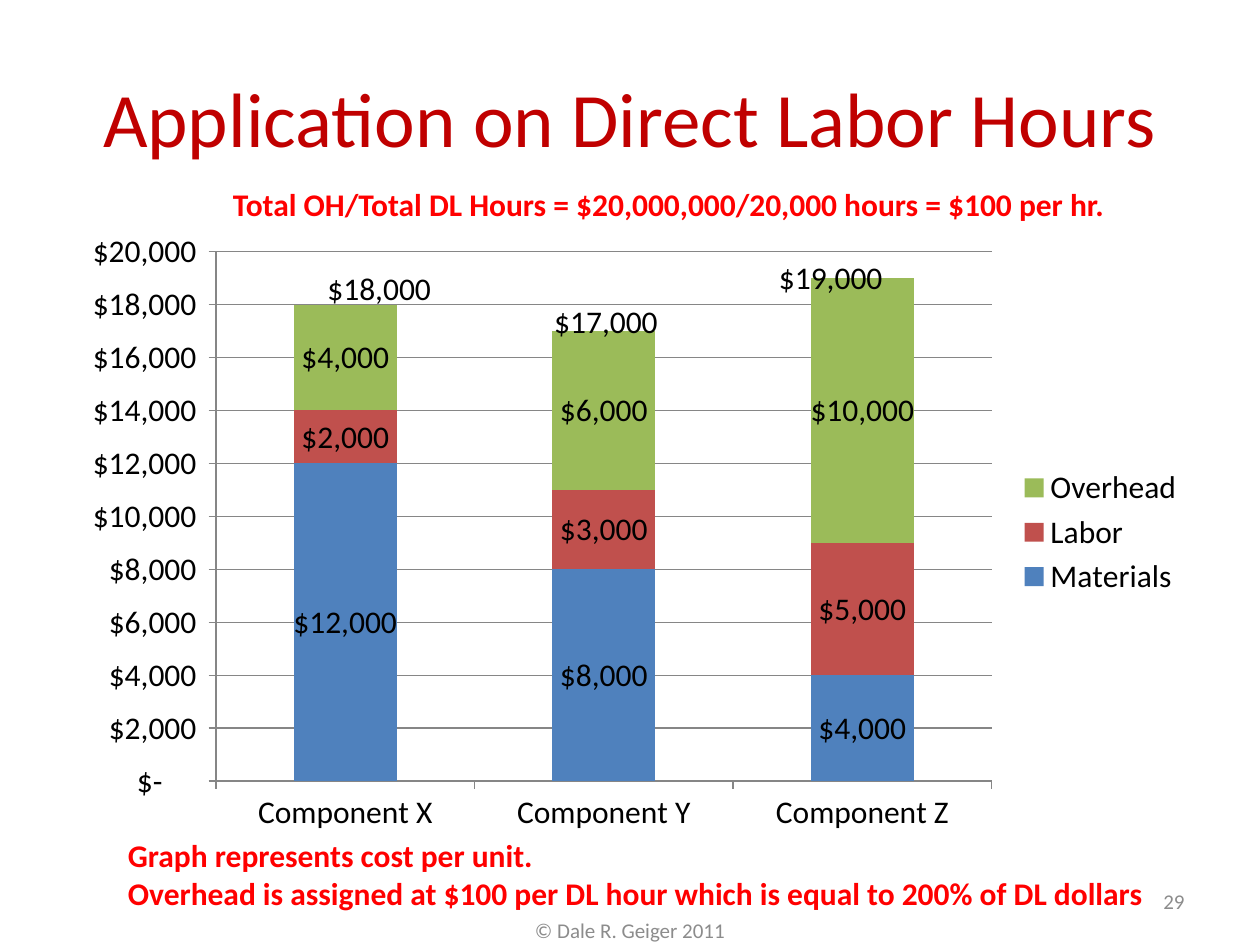
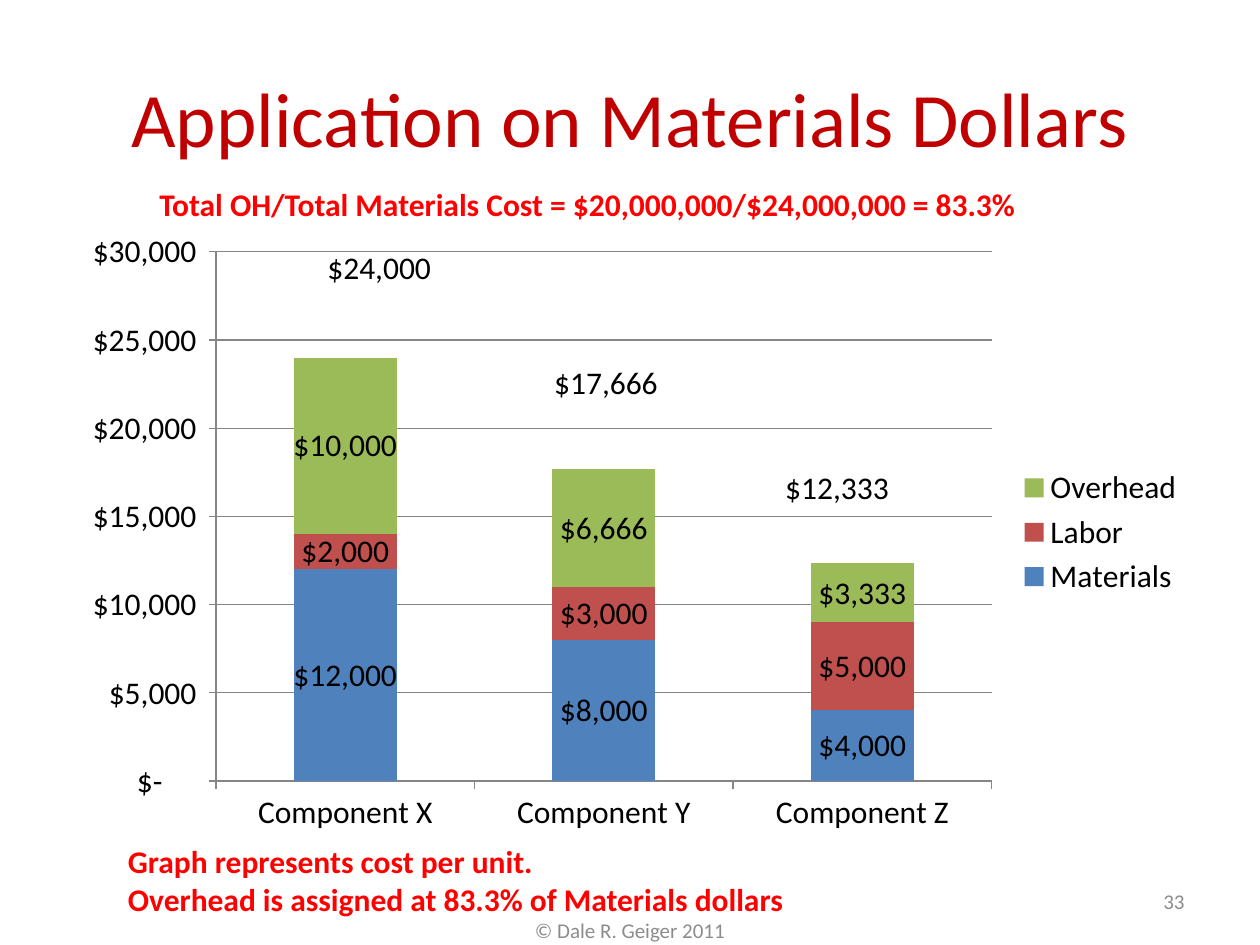
from dataclasses import dataclass

from lxml.etree import SubElement
from pptx import Presentation
from pptx.chart.data import CategoryChartData
from pptx.dml.color import RGBColor
from pptx.enum.chart import XL_CHART_TYPE as ChartType
from pptx.enum.chart import XL_LEGEND_POSITION as LegendPosition
from pptx.enum.chart import XL_TICK_MARK as TickMark
from pptx.enum.text import MSO_ANCHOR as Anchor
from pptx.enum.text import MSO_AUTO_SIZE as AutoSize
from pptx.enum.text import PP_ALIGN as Align
from pptx.oxml.ns import qn
from pptx.util import Inches, Pt


@dataclass(frozen=True)
class Theme:
    """Colours, type sizes and number format shared by the slides."""
    font: str = "Calibri"
    title: str = "C00000"
    accent: str = "FF0000"
    ink: str = "000000"
    muted: str = "8C8C8C"
    rule: str = "868686"
    series: tuple = ("4F81BD", "C0504D", "9BBB59")
    title_size: int = 44
    body_size: int = 18
    footer_size: int = 12
    money: str = '_("$"* #,##0_);_("$"* \\(#,##0\\);_("$"* "-"??_);_(@_)'


@dataclass(frozen=True)
class Box:
    """A region in grid columns and rows, twelve to the inch."""
    left: float
    top: float
    width: float
    height: float

    def inside(self, column, row, width, height):
        """Return a box placed relative to this one."""
        return Box(self.left + column, self.top + row, width, height)

    def lengths(self):
        """Return left, top, width and height as slide lengths."""
        cells = (self.left, self.top, self.width, self.height)
        return [Inches(cell / 12) for cell in cells]


@dataclass(frozen=True)
class Application:
    """The content of one overhead application slide."""
    title: str
    rate: str
    rate_box: Box
    basis: str
    note_box: Box
    overhead: tuple
    axis_top: int
    axis_step: int
    total_places: tuple
    number: int


THEME = Theme()
PAGE = Box(0, 0, 120, 90)
CHART = PAGE.inside(6, 21, 108, 59.4)
COMPONENTS = ("Component X", "Component Y", "Component Z")
MATERIALS = (12000, 8000, 4000)
LABOR = (2000, 3000, 5000)
PLOT_SHARES = {"x": 0.135, "y": 0.05, "w": 0.684, "h": 0.849}

APPLICATIONS = (
    Application(
        title="Application on Direct Labor Hours",
        rate="Total OH/Total DL Hours = $20,000,000/20,000 hours = $100 per hr.",
        rate_box=PAGE.inside(21, 17, 85.6, 4.8),
        basis="Overhead is assigned at $100 per DL hour which is equal to 200% of DL dollars",
        note_box=PAGE.inside(11, 79, 100, 8.5),
        overhead=(4000, 6000, 10000),
        axis_top=20000,
        axis_step=2000,
        total_places=((24, 4), (45.6, 7.2), (67, 3)),
        number=29,
    ),
    Application(
        title="Application on Materials Dollars",
        rate="Total OH/Total Materials Cost = $20,000,000/$24,000,000 = 83.3%",
        rate_box=PAGE.inside(14, 17, 91, 4.8),
        basis="Overhead is assigned at 83.3% of Materials dollars",
        note_box=PAGE.inside(11, 79.6, 65.4, 8.5),
        overhead=(10000, 6666, 3333),
        axis_top=30000,
        axis_step=5000,
        total_places=((24, 2), (45.6, 13), (67.6, 23)),
        number=33,
    ),
)


def style_font(font, size, color, bold=False):
    """Apply the theme typeface with a size, colour and weight."""
    font.name = THEME.font
    font.size = Pt(size)
    font.bold = bold
    font.color.rgb = RGBColor.from_string(color)


def add_text(page, box, lines, size, color, bold=False, align=Align.LEFT,
             anchor=Anchor.TOP, wrap=False):
    """Add a text box with one paragraph for each line."""
    frame = page.shapes.add_textbox(*box.lengths()).text_frame
    frame.word_wrap = wrap
    frame.auto_size = AutoSize.NONE if wrap else AutoSize.SHAPE_TO_FIT_TEXT
    frame.vertical_anchor = anchor
    frame.text = "\n".join(lines)
    for para in frame.paragraphs:
        para.alignment = align
        style_font(para.font, size, color, bold)


def add_title(page, box, title):
    """Add the centred slide title."""
    add_text(page, box, [title], THEME.title_size, THEME.title,
             align=Align.CENTER, anchor=Anchor.MIDDLE, wrap=True)


def add_footer(page, box, number):
    """Add the copyright line and the slide number."""
    add_text(page, box.inside(41, 2.8, 38, 4.8), ["© Dale R. Geiger 2011"],
             THEME.footer_size, THEME.muted,
             align=Align.CENTER, anchor=Anchor.MIDDLE, wrap=True)
    add_text(page, box.inside(86, 0, 28, 4.8), [str(number)],
             THEME.footer_size, THEME.muted,
             align=Align.RIGHT, anchor=Anchor.MIDDLE, wrap=True)


def fix_plot_area(chart):
    """Set the inner plot area to its shares of the chart."""
    plot_area = chart.element.find(".//" + qn("c:plotArea"))
    for old_layout in plot_area.findall(qn("c:layout")):
        plot_area.remove(old_layout)
    layout = SubElement(plot_area, qn("c:layout"))
    plot_area.insert(0, layout)
    manual = SubElement(layout, qn("c:manualLayout"))
    settings = {"layoutTarget": "inner", "xMode": "edge", "yMode": "edge", **PLOT_SHARES}
    for name, value in settings.items():
        SubElement(manual, qn(f"c:{name}")).set("val", str(value))


def style_axes(chart, application):
    """Set the scale, ticks and lines of both axes."""
    values = chart.value_axis
    values.minimum_scale = 0
    values.maximum_scale = application.axis_top
    values.major_unit = application.axis_step
    values.has_major_gridlines = True
    values.tick_labels.number_format = THEME.money
    values.tick_labels.number_format_is_linked = False
    for axis in (values, chart.category_axis):
        axis.major_tick_mark = TickMark.OUTSIDE
        axis.minor_tick_mark = TickMark.NONE
    for part in (values, chart.category_axis, values.major_gridlines):
        part.format.line.color.rgb = RGBColor.from_string(THEME.rule)
        part.format.line.width = Pt(0.75)


def add_cost_chart(page, box, application):
    """Add the stacked unit costs and the total for each component."""
    data = CategoryChartData(number_format=THEME.money)
    data.categories = COMPONENTS
    costs = {"Materials": MATERIALS, "Labor": LABOR, "Overhead": application.overhead}
    for name, amounts in costs.items():
        data.add_series(name, amounts)
    chart = page.shapes.add_chart(ChartType.COLUMN_STACKED, *box.lengths(), data).chart
    style_font(chart.font, THEME.body_size, THEME.ink)
    chart.has_title = False
    chart.has_legend = True
    chart.legend.position = LegendPosition.RIGHT
    chart.legend.include_in_layout = False
    plot = chart.plots[0]
    plot.vary_by_categories = False
    plot.gap_width = 150
    plot.overlap = 100
    for series, color in zip(plot.series, THEME.series):
        series.format.fill.solid()
        series.format.fill.fore_color.rgb = RGBColor.from_string(color)
        labels = series.data_labels
        labels.show_value = True
        labels.number_format = THEME.money
        labels.number_format_is_linked = False
        style_font(labels.font, THEME.body_size, THEME.ink)
    style_axes(chart, application)
    fix_plot_area(chart)
    for place, amounts in zip(application.total_places, zip(*costs.values())):
        add_text(page, box.inside(*place, 12.4, 4.8), [f"${sum(amounts):,}"],
                 THEME.body_size, THEME.ink)


def add_application(deck, application):
    """Add one overhead application slide."""
    page = deck.slides.add_slide(deck.slide_layouts[6])
    add_title(page, PAGE.inside(6, 3.6, 108, 15), application.title)
    add_cost_chart(page, CHART, application)
    add_text(page, application.note_box,
             ["Graph represents cost per unit.", application.basis],
             THEME.body_size, THEME.accent, bold=True)
    add_text(page, application.rate_box, [application.rate],
             THEME.body_size, THEME.accent, bold=True)
    add_footer(page, PAGE.inside(0, 83.4, 120, 6.6), application.number)


def main():
    """Build and save the deck."""
    deck = Presentation()
    deck.slide_width, deck.slide_height = PAGE.lengths()[2:]
    for application in APPLICATIONS:
        add_application(deck, application)
    deck.save("out.pptx")


if __name__ == "__main__":
    main()
